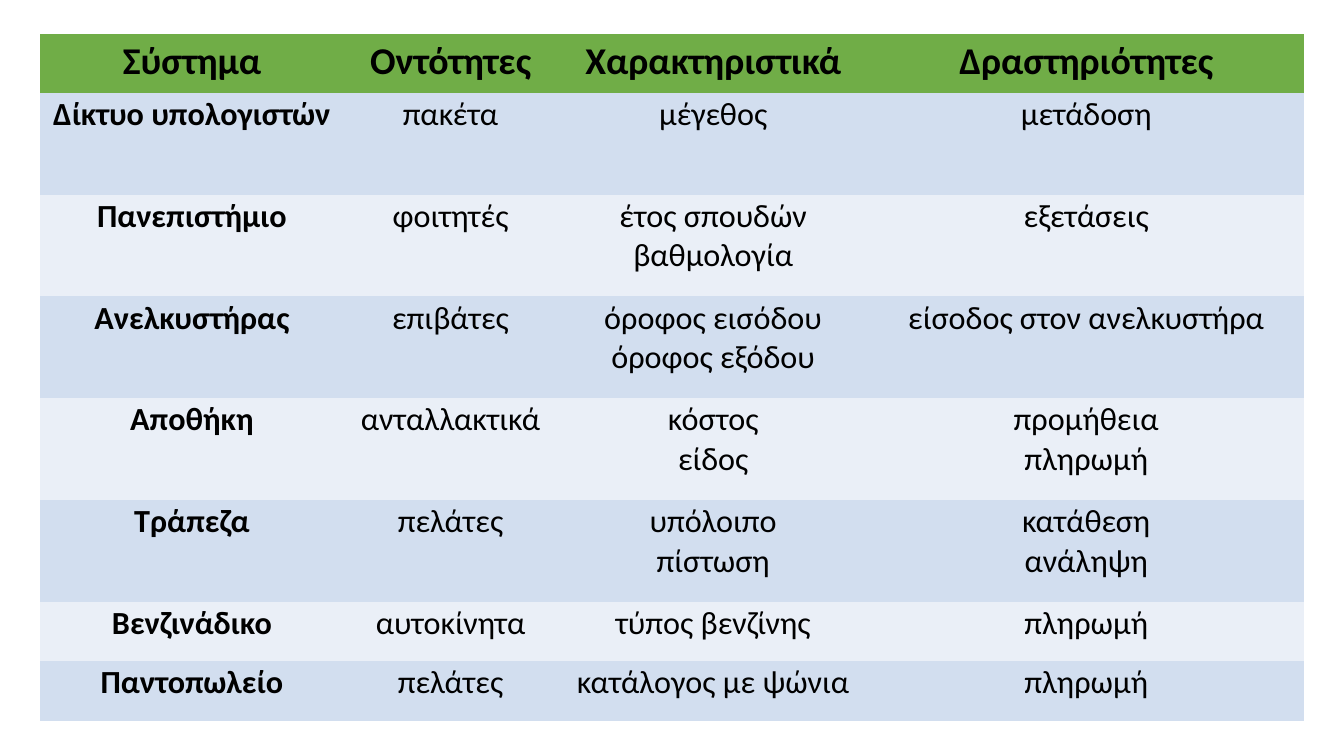
"""Builds a slide with a table of systems, their entities, attributes and activities."""
from pptx import Presentation
from pptx.dml.color import RGBColor
from pptx.enum.text import MSO_ANCHOR, PP_ALIGN
from pptx.oxml.ns import qn
from pptx.util import Inches, Pt

BLACK = RGBColor(0x00, 0x00, 0x00)
GREEN = RGBColor(0x70, 0xAD, 0x47)
BLUE = RGBColor(0xD2, 0xDE, 0xEF)
PALE_BLUE = RGBColor(0xEA, 0xEF, 0xF7)
NO_STYLE = "{2D5ABB26-0587-4C30-8999-92F81FD0307C}"

COLUMN_WIDTHS = [3.07, 2.06, 3.15, 4.25]
ROW_HEIGHTS = [0.58] + [1.01] * 5 + [0.59] * 2
ROWS = [
    ["Σύστημα", "Οντότητες", "Χαρακτηριστικά", "Δραστηριότητες"],
    ["Δίκτυο υπολογιστών", "πακέτα", "μέγεθος", "μετάδοση"],
    ["Πανεπιστήμιο", "φοιτητές", "έτος σπουδών\nβαθμολογία", "εξετάσεις"],
    ["Ανελκυστήρας", "επιβάτες", "όροφος εισόδου\nόροφος εξόδου", "είσοδος στον ανελκυστήρα"],
    ["Αποθήκη", "ανταλλακτικά", "κόστος\nείδος", "προμήθεια\nπληρωμή"],
    ["Τράπεζα", "πελάτες", "υπόλοιπο\nπίστωση", "κατάθεση\nανάληψη"],
    ["Βενζινάδικο", "αυτοκίνητα", "τύπος βενζίνης", "πληρωμή"],
    ["Παντοπωλείο", "πελάτες", "κατάλογος με ψώνια", "πληρωμή"],
]


def write_cell(cell, text, *, size, bold, fill, anchor):
    cell.fill.solid()
    cell.fill.fore_color.rgb = fill
    cell.vertical_anchor = anchor
    cell.margin_left = Inches(0)
    cell.margin_top = Inches(0.02)
    cell.margin_right = Inches(0.06)
    cell.margin_bottom = Inches(0.08)
    cell.text_frame.text = text
    for para in cell.text_frame.paragraphs:
        para.alignment = PP_ALIGN.CENTER
        for span in para.runs:
            span.font.name = "Calibri"
            span.font.size = Pt(size)
            span.font.bold = bold
            span.font.color.rgb = BLACK


deck = Presentation()
deck.slide_width = Inches(13.33)
deck.slide_height = Inches(7.5)
page = deck.slides.add_slide(deck.slide_layouts[6])

frame = page.shapes.add_table(
    len(ROWS), len(COLUMN_WIDTHS), Inches(0.4), Inches(0.34),
    Inches(sum(COLUMN_WIDTHS)), Inches(sum(ROW_HEIGHTS)))
frame.element.find(".//" + qn("a:tableStyleId")).text = NO_STYLE
table = frame.table

for column, width in zip(table.columns, COLUMN_WIDTHS):
    column.width = Inches(width)
for row, height in zip(table.rows, ROW_HEIGHTS):
    row.height = Inches(height)

for row_index, texts in enumerate(ROWS):
    is_header = row_index == 0
    band = BLUE if row_index % 2 else PALE_BLUE
    for column_index, text in enumerate(texts):
        write_cell(
            table.cell(row_index, column_index), text,
            size=27 if is_header else 23,
            bold=is_header or column_index == 0,
            fill=GREEN if is_header else band,
            anchor=MSO_ANCHOR.BOTTOM if is_header else MSO_ANCHOR.TOP)

deck.save("out.pptx")
